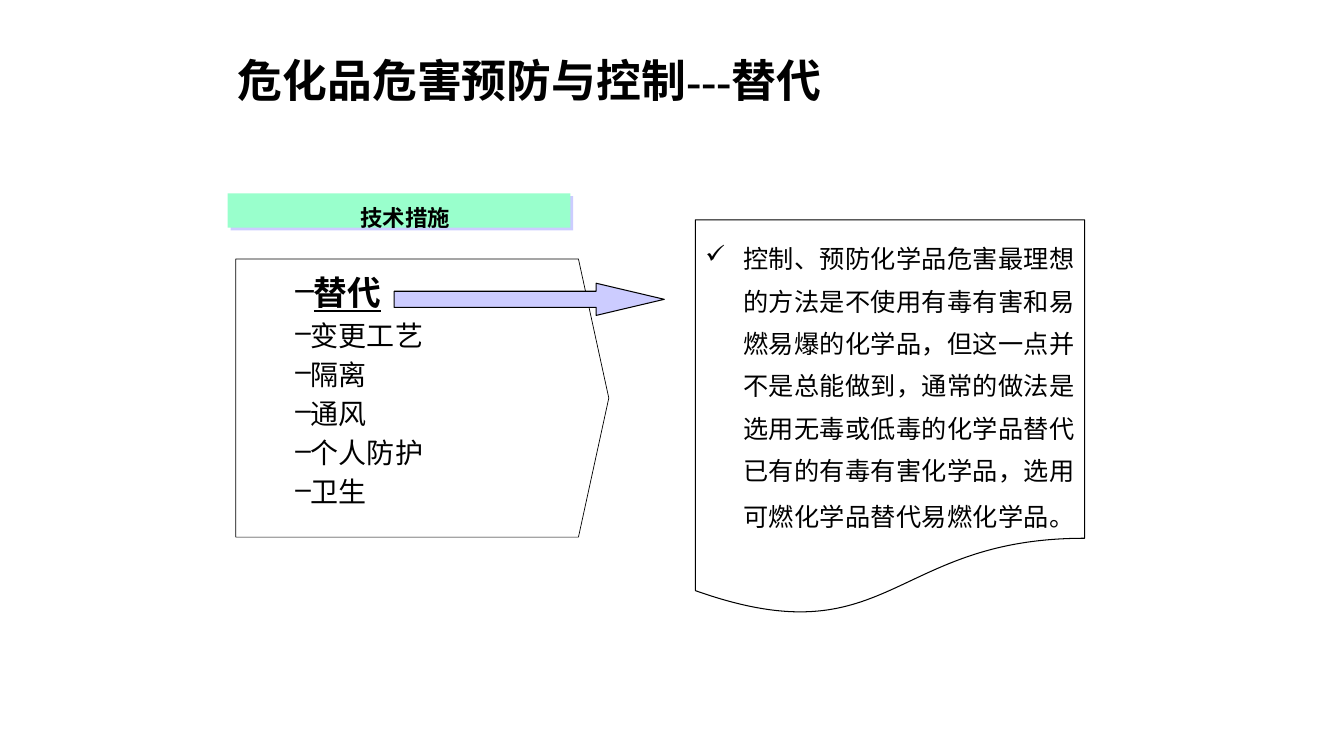
from lxml.etree import SubElement
from pptx import Presentation
from pptx.dml.color import RGBColor
from pptx.enum.shapes import MSO_SHAPE as Preset
from pptx.enum.text import MSO_ANCHOR as Anchor, MSO_AUTO_SIZE as AutoSize, PP_ALIGN as Align
from pptx.oxml.ns import qn
from pptx.util import Pt

COLORS = {"ink": "000000", "paper": "FFFFFF", "banner": "99FFCC", "lilac": "CCCCFF"}
SERIF = "Times New Roman"
SANS = "Arial"
MEASURES = ["替代", "变更工艺", "隔离", "通风", "个人防护", "卫生"]
ADVICE = (
    "控制、预防化学品危害最理想的方法是不使用有毒有害和易燃易爆的化学品，"
    "但这一点并不是总能做到，通常的做法是选用无毒或低毒的化学品替代已有的"
    "有毒有害化学品，选用可燃化学品替代易燃化学品。"
)


def color(key):
    """Return the named colour."""
    return RGBColor.from_string(COLORS[key])


def add_outline(slide, preset, box, fill=None, line=None, adjust=()):
    """Add a flat preset shape; without a fill or line width that part is absent."""
    shape = slide.shapes.add_shape(preset, *map(Pt, box))
    shape.shadow.inherit = False
    for index, value in enumerate(adjust):
        shape.adjustments[index] = value
    if fill:
        shape.fill.solid()
        shape.fill.fore_color.rgb = color(fill)
    else:
        shape.fill.background()
    if line:
        shape.line.color.rgb = color("ink")
        shape.line.width = Pt(line)
    else:
        shape.line.fill.background()
    return shape


def add_text_frame(slide, box, inset=True):
    """Add a wrapping text box and return its frame."""
    frame = slide.shapes.add_textbox(*map(Pt, box)).text_frame
    frame.word_wrap = True
    frame.auto_size = AutoSize.SHAPE_TO_FIT_TEXT
    if not inset:
        frame.margin_left = frame.margin_right = frame.margin_top = frame.margin_bottom = 0
    return frame


def set_indent(paragraph, margin, first, bullet=None):
    """Set the left margin, first-line indent and optional bullet character."""
    properties = paragraph._p.get_or_add_pPr()
    properties.set("marL", str(Pt(margin)))
    properties.set("indent", str(Pt(first)))
    if bullet:
        SubElement(properties, qn("a:buChar"), char=bullet)


def set_font(paragraph, name, size, bold=False):
    """Format the whole paragraph in black."""
    font = paragraph.font
    font.name, font.size, font.bold = name, Pt(size), bold
    font.color.rgb = color("ink")


def add_title(slide, box):
    """Place the slide title."""
    title = slide.shapes.title
    title.left, title.top, title.width, title.height = map(Pt, box)
    frame = title.text_frame
    frame.word_wrap = True
    frame.auto_size = AutoSize.SHAPE_TO_FIT_TEXT
    frame.vertical_anchor = Anchor.TOP
    frame.text = "危化品危害预防与控制---替代"
    heading = frame.paragraphs[0]
    heading.alignment = Align.JUSTIFY
    set_indent(heading, 27, -27)
    set_font(heading, SERIF, 32, bold=True)


def add_banner(slide, box):
    """Draw the green heading bar with its offset shadow and label."""
    left, top, width, height = box
    bar = add_outline(slide, Preset.RECTANGLE, box, fill="banner")
    effects = bar._element.spPr.find(qn("a:effectLst"))
    shadow = SubElement(effects, qn("a:outerShdw"), dist=str(Pt(2.8)), dir="2700000",
                        algn="ctr", rotWithShape="0")
    SubElement(shadow, qn("a:srgbClr"), val=COLORS["lilac"])
    frame = add_text_frame(slide, (left + 22.3, top + 7.2, 208.8, 19.4), inset=False)
    frame.vertical_anchor = Anchor.MIDDLE
    label = frame.paragraphs[0]
    label.text = "技术措施"
    label.alignment = Align.CENTER
    set_font(label, SANS, 16, bold=True)


def add_measures(slide, box):
    """Draw the pentagon listing the measures, the first one emphasised."""
    left, top, width, height = box
    add_outline(slide, Preset.PENTAGON, box, fill="paper", line=0.5, adjust=[0.109])
    frame = add_text_frame(slide, (left + 6.5, top + 9.4, 228.2, 174.2), inset=False)
    for index, name in enumerate(MEASURES):
        chosen = index == 0
        measure = frame.paragraphs[0] if chosen else frame.add_paragraph()
        measure.text = name
        measure.level = 1
        measure.space_before = Pt(0 if chosen else 4)
        set_indent(measure, 15, 21, "–")
        set_font(measure, SERIF, 24 if chosen else 20, bold=chosen)
        measure.font.underline = chosen


def add_advice(slide, box):
    """Draw the document shape with the advice on substitution."""
    left, top, width, height = box
    add_outline(slide, Preset.FLOWCHART_DOCUMENT, box, line=0.75)
    frame = add_text_frame(slide, (left, top + 5, width, 224))
    advice = frame.paragraphs[0]
    advice.text = ADVICE
    advice.alignment = Align.JUSTIFY
    advice.line_spacing = 1.4
    set_indent(advice, 27, -27, "✓")
    set_font(advice, SERIF, 18)
    ending = advice.add_run()
    ending.text = " "
    ending.font.size = Pt(20)
    ending.font.bold = True


def add_pointer(slide, box):
    """Draw the arrow from the chosen measure to the advice."""
    add_outline(slide, Preset.RIGHT_ARROW, box, fill="lilac", line=0.75, adjust=[0.5, 2.118])


def main():
    """Build and save the slide."""
    deck = Presentation()
    deck.slide_width, deck.slide_height = Pt(960), Pt(540)
    slide = deck.slides.add_slide(deck.slide_layouts[5])
    add_title(slide, (162.7, 33.8, 436.3, 46))
    add_measures(slide, (168.5, 185, 266.4, 198.7))
    add_banner(slide, (162.7, 138.2, 244.8, 24.5))
    add_advice(slide, (496.8, 157, 277.9, 283.7))
    add_pointer(slide, (281.5, 202.3, 193, 23))
    deck.save("out.pptx")


if __name__ == "__main__":
    main()
